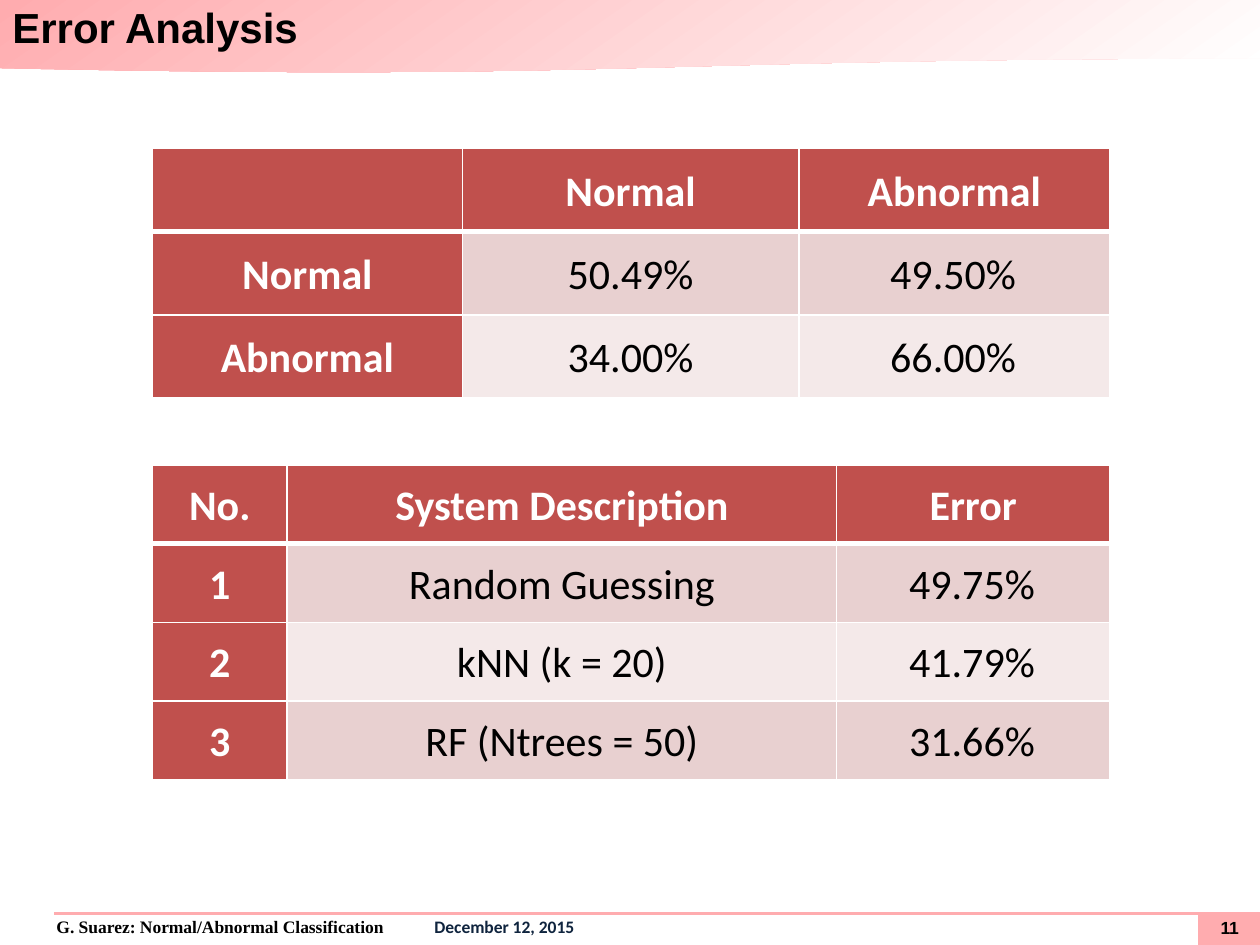
from lxml.etree import SubElement
from pptx import Presentation
from pptx.dml.color import RGBColor
from pptx.enum.shapes import MSO_CONNECTOR as Connector, MSO_SHAPE as Shape
from pptx.enum.text import MSO_ANCHOR as Anchor, PP_ALIGN as Align
from pptx.oxml import parse_xml
from pptx.oxml.ns import nsdecls, qn
from pptx.util import Inches, Pt

COLUMNS, ROWS = 100, 75


def color(hex_string):
    return RGBColor.from_string(hex_string)


class SlideBuilder:
    """Draws on one slide; lengths are columns and rows of a 100 by 75 grid."""

    PINK, RED, WHITE, BLACK, NAVY = "FFACAF", "C0504D", "FFFFFF", "000000", "0F243E"
    BANDS = ("E8D0D0", "F4E9E9")
    TABLE_FONT, TABLE_SIZE = "Calibri", 24

    def __init__(self, presentation):
        self.column = presentation.slide_width / COLUMNS
        self.row = presentation.slide_height / ROWS
        self.slide = presentation.slides.add_slide(presentation.slide_layouts[6])

    def place(self, left, top, width, height):
        return (round(left * self.column), round(top * self.row),
                round(width * self.column), round(height * self.row))

    def panel(self, kind, area, gradient=None):
        """Adds a borderless pink shape, fading to the gradient colour if one is given."""
        shape = self.slide.shapes.add_shape(kind, *self.place(*area))
        shape.shadow.inherit = False
        shape.line.fill.background()
        if gradient is None:
            shape.fill.solid()
            shape.fill.fore_color.rgb = color(self.PINK)
            return
        shape.fill.gradient()
        shape.fill.gradient_angle = 305
        for stop, stop_color in zip(shape.fill.gradient_stops, (self.PINK, gradient)):
            stop.color.rgb = color(stop_color)

    def rule(self, left, top, right):
        start_x, start_y, end_x, _ = self.place(left, top, right, 0)
        line = self.slide.shapes.add_connector(
            Connector.STRAIGHT, start_x, start_y, end_x, start_y)
        line.line.color.rgb = color(self.PINK)
        line.line.width = Pt(1.5)
        SubElement(line._element.spPr, qn("a:effectLst"))

    def run(self, paragraph, text, font, size, hex_string, bold=True):
        run = paragraph.add_run()
        run.text = text
        run.font.name, run.font.size, run.font.bold = font, Pt(size), bold
        run.font.color.rgb = color(hex_string)

    def text(self, area, margins, anchor):
        """Adds an empty text box and returns its first paragraph."""
        frame = self.slide.shapes.add_textbox(*self.place(*area)).text_frame
        frame.word_wrap = True
        frame.vertical_anchor = anchor
        (frame.margin_left, frame.margin_top,
         frame.margin_right, frame.margin_bottom) = map(Inches, margins)
        return frame.paragraphs[0]

    def borders(self, cell, bottom):
        properties = cell._tc.get_or_add_tcPr()
        widths = (("lnL", 1), ("lnR", 1), ("lnT", 1), ("lnB", bottom))
        for index, (side, width) in enumerate(widths):
            properties.insert(index, parse_xml(
                f'<a:{side} {nsdecls("a")} w="{Pt(width)}"><a:solidFill>'
                f'<a:srgbClr val="{self.WHITE}"/></a:solidFill></a:{side}>'))

    def table(self, left, top, widths, row_height, records):
        """Adds a table whose first row and first column are headers."""
        area = self.place(left, top, sum(widths), row_height * len(records))
        table = self.slide.shapes.add_table(len(records), len(widths), *area).table
        for table_column, width in zip(table.columns, widths):
            table_column.width = round(width * self.column)
        for row_index, record in enumerate(records):
            table.rows[row_index].height = round(row_height * self.row)
            for column_index, text in enumerate(record):
                self.cell(table.cell(row_index, column_index), text,
                          row_index, column_index == 0, column_index == len(record) - 1)

    def cell(self, cell, text, row_index, is_first, is_last):
        is_top = row_index == 0
        is_header = is_top or is_first
        cell.fill.solid()
        cell.fill.fore_color.rgb = color(
            self.RED if is_header else self.BANDS[(row_index - 1) % 2])
        self.borders(cell, 3 if is_top else 1)
        cell.vertical_anchor = Anchor.MIDDLE
        cell.margin_top = cell.margin_bottom = 0
        cell.margin_left = Inches(0.02 if is_last else 0.04)
        cell.margin_right = Inches(0.02 if is_last and is_top else 0.04)
        if text:
            paragraph = cell.text_frame.paragraphs[0]
            paragraph.alignment = Align.CENTER
            paragraph.line_spacing = 1.07
            self.run(paragraph, text, self.TABLE_FONT, self.TABLE_SIZE,
                     self.WHITE if is_header else self.BLACK, is_header)

    def footer(self, area, title, date):
        """Adds the footer line, with the date at a right-hand tab stop."""
        paragraph = self.text(area, (0.1, 0.05, 0.1, 0.05), Anchor.TOP)
        properties = paragraph._p.get_or_add_pPr()
        properties.set("marL", str(Inches(0.31)))
        properties.set("indent", "0")
        tabs = SubElement(properties, qn("a:tabLst"))
        SubElement(tabs, qn("a:tab"), pos=str(Inches(9.31)), algn="r")
        paragraph.line_spacing = 0.95
        self.run(paragraph, title, "Times New Roman", 10, self.BLACK)
        self.run(paragraph, "\t" + date, "Calibri", 10, self.NAVY)


def main():
    presentation = Presentation()
    presentation.slide_width, presentation.slide_height = Inches(10), Inches(7.5)
    builder = SlideBuilder(presentation)

    builder.panel(Shape.FLOWCHART_DOCUMENT, (0, 0, 100, 5.8), gradient=builder.WHITE)
    builder.panel(Shape.RECTANGLE, (95.1, 72.4, 4.9, 2.6))
    builder.footer((0.4, 72.3, 99.6, 2.6),
                   "G. Suarez: Normal/Abnormal Classification", "December 12, 2015")
    builder.rule(4.3, 72.5, 100)
    page_number = builder.text((95.6, 72.8, 4, 1.7), (0, 0, 0, 0), Anchor.MIDDLE)
    page_number.alignment = Align.CENTER
    builder.run(page_number, "11", "Arial", 10, builder.BLACK)
    title = builder.text((0, 0, 100, 4.3), (0.1, 0, 0, 0), Anchor.MIDDLE)
    builder.run(title, "Error Analysis", "Arial", 24, builder.BLACK)

    builder.table(12.1, 11.8, (24.6, 26.7, 24.7), 6.6, (
        ("", "Normal", "Abnormal"),
        ("Normal", "50.49%", "49.50%"),
        ("Abnormal", "34.00%", "66.00%")))
    builder.table(12.1, 36.9, (10.7, 43.6, 21.7), 6.25, (
        ("No.", "System Description", "Error"),
        ("1", "Random Guessing", "49.75%"),
        ("2", "kNN (k = 20)", "41.79%"),
        ("3", "RF (Ntrees = 50)", "31.66%")))

    presentation.save("out.pptx")


if __name__ == "__main__":
    main()
